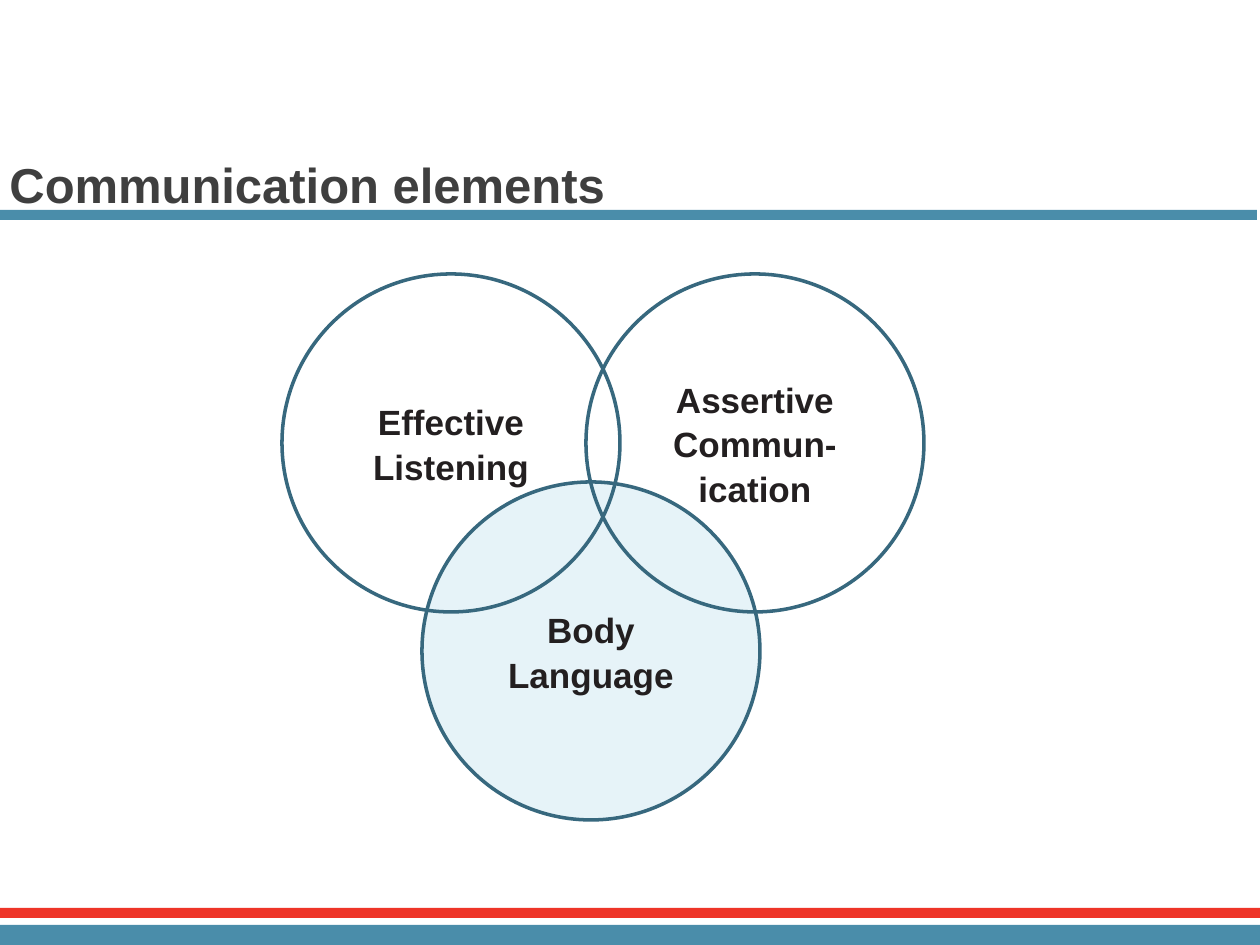
from pptx import Presentation
from pptx.dml.color import RGBColor
from pptx.enum.shapes import MSO_SHAPE
from pptx.enum.text import MSO_ANCHOR, PP_ALIGN
from pptx.util import Emu, Pt

PX = 914400 // 126
WIDTH, HEIGHT = 1260, 945
COLORS = {
    "band": "4A8DAA",
    "accent": "EE3528",
    "title": "3F3F3F",
    "outline": "37687E",
    "tint": "E6F3F8",
    "label": "231F20",
}


def px(*lengths):
    return [Emu(length * PX) for length in lengths]


def color(name):
    return RGBColor.from_string(COLORS[name])


def set_font(paragraph, size, color_name):
    font = paragraph.font
    font.name, font.size, font.bold = "Arial", Pt(size), True
    font.color.rgb = color(color_name)


def add_band(slide, left, top, width, height, color_name):
    band = slide.shapes.add_shape(MSO_SHAPE.RECTANGLE, *px(left, top, width, height))
    band.shadow.inherit = False
    band.fill.solid()
    band.fill.fore_color.rgb = color(color_name)
    band.line.fill.background()


def add_header(slide, left, top, width, height):
    """Place the title above a rule that closes the box."""
    rule = 10
    add_band(slide, left, top + height - rule, width, rule, "band")
    title = slide.shapes.add_textbox(*px(left, top, 853, height)).text_frame
    title.word_wrap = True
    title.vertical_anchor = MSO_ANCHOR.BOTTOM
    heading = title.paragraphs[0]
    heading.text = "Communication elements"
    heading.line_spacing = 0.85
    set_font(heading, 28, "title")


def add_footer(slide, left, top, width, height):
    """Place a thin accent stripe over a thicker band."""
    stripe, band = 10, 20
    add_band(slide, left, top, width, stripe, "accent")
    add_band(slide, left, top + height - band, width, band, "band")


def add_circle(slide, left, top, diameter, label, tint=None):
    circle = slide.shapes.add_shape(
        MSO_SHAPE.OVAL, *px(left, top, diameter, diameter))
    circle.shadow.inherit = False
    if tint:
        circle.fill.solid()
        circle.fill.fore_color.rgb = color(tint)
    else:
        circle.fill.background()
    circle.line.color.rgb = color("outline")
    circle.line.width = Pt(2)
    frame = circle.text_frame
    frame.word_wrap = True
    frame.vertical_anchor = MSO_ANCHOR.MIDDLE
    caption = frame.paragraphs[0]
    caption.text = label
    caption.alignment = PP_ALIGN.CENTER
    caption.line_spacing = 1.05
    set_font(caption, 20, "label")


def add_venn(slide, left, top, width, height):
    """Place two circles in the top corners over a tinted one at the bottom."""
    diameter = 338
    add_circle(slide, left + 140, top + height - diameter, diameter,
               "Body Language", "tint")
    add_circle(slide, left, top, diameter, "Effective Listening")
    add_circle(slide, left + width - diameter, top, diameter,
               "Assertive Commun-ication")


def main():
    presentation = Presentation()
    presentation.slide_width, presentation.slide_height = px(WIDTH, HEIGHT)
    slide = presentation.slides.add_slide(presentation.slide_layouts[6])
    add_header(slide, -3, 139, WIDTH, 81)
    add_footer(slide, 0, 908, WIDTH, HEIGHT - 908)
    add_venn(slide, 282, 274, 642, 546)
    presentation.save("out.pptx")


if __name__ == "__main__":
    main()
